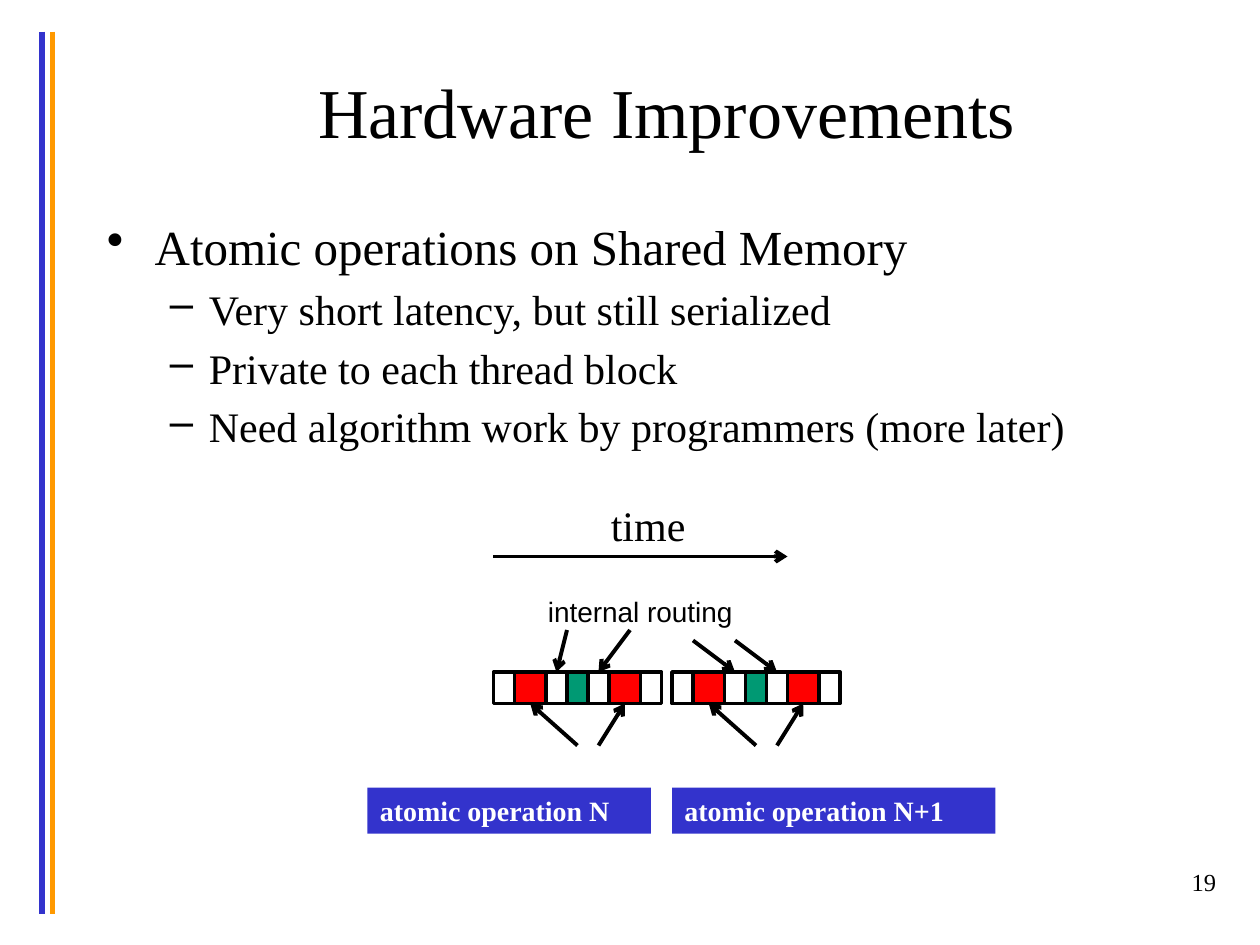
from pptx import Presentation
from pptx.dml.color import RGBColor
from pptx.enum.shapes import MSO_CONNECTOR, MSO_SHAPE
from pptx.enum.text import MSO_ANCHOR, PP_ALIGN
from pptx.oxml.ns import qn
from pptx.util import Inches, Pt
from lxml import etree

STRAIGHT = MSO_CONNECTOR.STRAIGHT
RECTANGLE = MSO_SHAPE.RECTANGLE
LEFT, CENTER, RIGHT = PP_ALIGN.LEFT, PP_ALIGN.CENTER, PP_ALIGN.RIGHT
TOP, MIDDLE = MSO_ANCHOR.TOP, MSO_ANCHOR.MIDDLE

COLORS = {
    "black": "000000",
    "white": "FFFFFF",
    "blue": "3333CC",
    "orange": "FF9900",
    "red": "FF0000",
    "green": "009973",
}
SERIF, SANS = "Times New Roman", "Arial"
CELLS = [(2, "white"), (3, "red"), (2, "white"), (2, "green"),
         (2, "white"), (3, "red"), (2, "white")]
STRIP_LEFT, STRIP_TOP, STRIP_PITCH = 47, 64, 17
ROUTING_ARROWS = [((54, 60), (53, 64)), ((60, 60), (57, 64)),
                  ((66, 61), (70, 64)), ((70, 61), (74, 64))]
BULLETS = [
    (0, "Atomic operations on Shared Memory"),
    (1, "Very short latency, but still serialized"),
    (1, "Private to each thread block"),
    (1, "Need algorithm work by programmers (more later)"),
]
LEVELS = [(28, "•", 0.38, -0.38), (24, "–", 0.81, -0.31)]


class SlideBuilder:
    """Draws styled elements on a slide with a grid of 120 columns and 90 rows."""

    def __init__(self, presentation):
        self.slide = presentation.slides.add_slide(presentation.slide_layouts[6])
        self.column = presentation.slide_width / 120
        self.row = presentation.slide_height / 90

    def place(self, x, y):
        return round(x * self.column), round(y * self.row)

    def color(self, name):
        return RGBColor.from_string(COLORS[name])

    def styled_run(self, paragraph, text, size, color="black", font=SERIF, bold=False):
        run = paragraph.add_run()
        run.text = text
        run.font.size = Pt(size)
        run.font.name = font
        run.font.bold = bold
        run.font.color.rgb = self.color(color)

    def frame(self, box):
        shape = self.slide.shapes.add_textbox(*self.place(*box[:2]), *self.place(*box[2:]))
        shape.text_frame.word_wrap = True
        return shape.text_frame

    def textbox(self, box, text, size, align=LEFT, anchor=TOP, font=SERIF):
        frame = self.frame(box)
        frame.vertical_anchor = anchor
        frame.paragraphs[0].alignment = align
        self.styled_run(frame.paragraphs[0], text, size, font=font)

    def bullets(self, box, items):
        frame = self.frame(box)
        for index, (level, text) in enumerate(items):
            paragraph = frame.add_paragraph() if index else frame.paragraphs[0]
            size, mark, margin, indent = LEVELS[level]
            paragraph.level = level
            properties = paragraph._p.get_or_add_pPr()
            properties.set("marL", str(Inches(margin)))
            properties.set("indent", str(Inches(indent)))
            spacing = etree.SubElement(properties, qn("a:spcBef"))
            etree.SubElement(spacing, qn("a:spcPct"), val="20000")
            etree.SubElement(properties, qn("a:buChar"), char=mark)
            self.styled_run(paragraph, text, size)

    def rectangle(self, box, fill, outline=None):
        shape = self.slide.shapes.add_shape(
            RECTANGLE, *self.place(*box[:2]), *self.place(*box[2:]))
        shape.shadow.inherit = False
        shape.fill.solid()
        shape.fill.fore_color.rgb = self.color(fill)
        if outline:
            shape.line.color.rgb = self.color(outline)
            shape.line.width = Pt(2)
        else:
            shape.line.fill.background()
        return shape

    def label(self, box, text):
        frame = self.rectangle(box, "blue").text_frame
        frame.word_wrap = True
        frame.vertical_anchor = TOP
        frame.paragraphs[0].alignment = LEFT
        self.styled_run(frame.paragraphs[0], text, 16, "white", bold=True)

    def line(self, start, end, color="black", width=2.25):
        connector = self.slide.shapes.add_connector(
            STRAIGHT, *self.place(*start), *self.place(*end))
        connector.line.color.rgb = self.color(color)
        connector.line.width = Pt(width)
        etree.SubElement(connector._element.spPr, qn("a:effectLst"))
        return connector

    def arrow(self, start, end):
        outline = self.line(start, end)._element.spPr.find(qn("a:ln"))
        etree.SubElement(outline, qn("a:tailEnd"), type="arrow")

    def strip(self, left, top):
        for width, fill in CELLS:
            self.rectangle((left, top, width, 3), fill, "black")
            left += width


def main():
    presentation = Presentation()
    presentation.slide_width = Inches(10)
    presentation.slide_height = Inches(7.5)
    builder = SlideBuilder(presentation)

    for x, color in ((4, "blue"), (5, "orange")):
        builder.line((x, 3), (x, 87), color, 3)
    builder.textbox((9, 3, 109, 15), "Hardware Improvements", 40, CENTER, MIDDLE)
    builder.bullets((9, 20, 109, 29), BULLETS)

    builder.textbox((57, 47, 9.6, 6), "time", 24)
    builder.arrow((47, 53), (75, 53))
    builder.textbox((51, 56, 21, 4.4), "internal routing", 16, font=SANS)

    for index in range(2):
        left = STRIP_LEFT + index * STRIP_PITCH
        builder.strip(left, STRIP_TOP)
        builder.arrow((left + 8, 71), (left + 3.5, 67))
        builder.arrow((left + 10, 71), (left + 12.5, 67))
    for start, end in ROUTING_ARROWS:
        builder.arrow(start, end)

    builder.label((35, 75, 27, 4.4), "atomic operation N")
    builder.label((64, 75, 30.8, 4.4), "atomic operation N+1")
    builder.textbox((92, 82, 25, 6), "19", 14, RIGHT)

    presentation.save("out.pptx")


if __name__ == "__main__":
    main()
